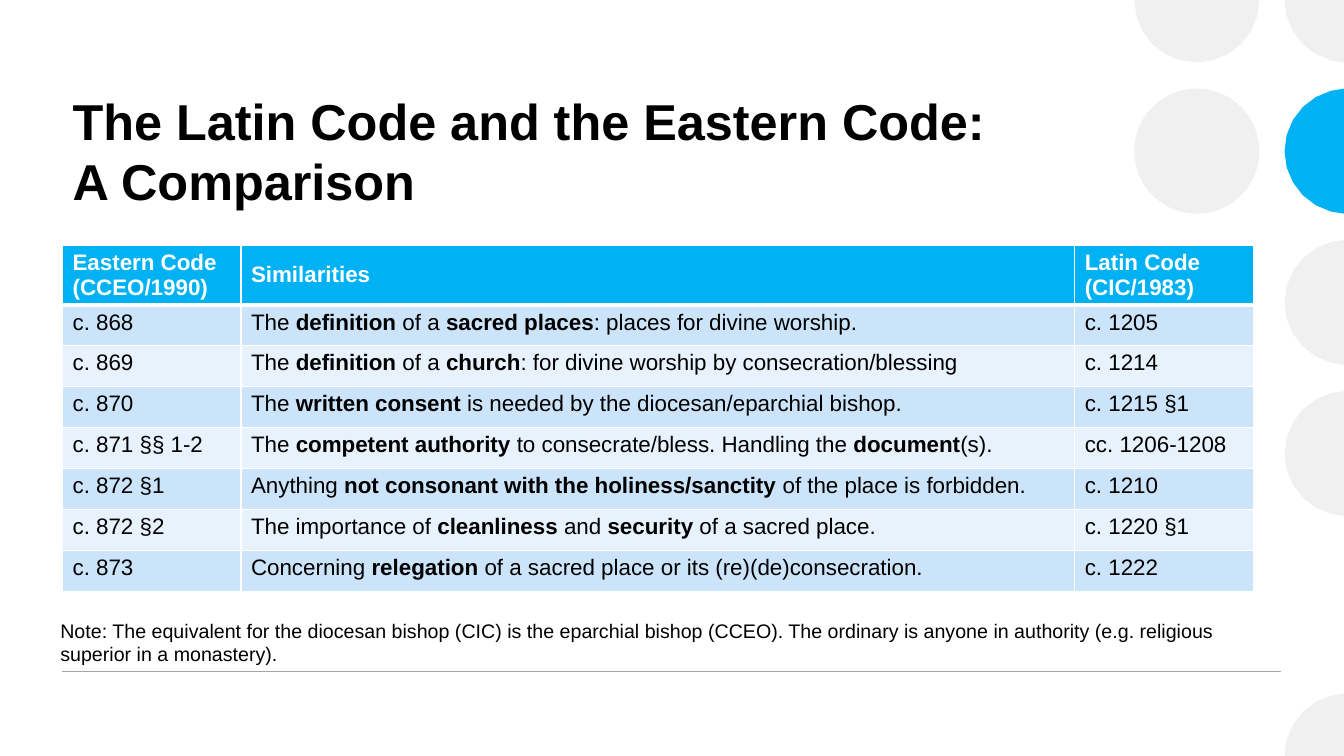
import math

from lxml import etree
from pptx import Presentation, util as u
from pptx.dml.color import RGBColor
from pptx.enum import shapes, text
from pptx.oxml import ns

WIDE, HIGH = 13.33, 7.5
BLUE, GRAY = "00B2F3", "EFF0EF"
HEADS = ["Eastern Code\n(CCEO/1990)", "Similarities", "Latin Code\n(CIC/1983)"]
CANONS = [
    ("c. 868", "The **definition** of a **sacred places**: places for divine worship.", "c. 1205"),
    ("c. 869", "The **definition** of a **church**: for divine worship by consecration/blessing", "c. 1214"),
    ("c. 870", "The **written consent** is needed by the diocesan/eparchial bishop.", "c. 1215 §1"),
    ("c. 871 §§ 1-2", "The **competent authority **to consecrate/bless. Handling the **document**(s).", "cc. 1206-1208"),
    ("c. 872 §1", "Anything **not consonant with the holiness/sanctity **of the place is forbidden.", "c. 1210"),
    ("c. 872 §2", "The importance of **cleanliness** and **security** of a sacred place.", "c. 1220 §1"),
    ("c. 873", "Concerning **relegation** of a sacred place or its (re)(de)consecration.", "c. 1222"),
]
NOTE = ("Note: The equivalent for the diocesan bishop (CIC) is the eparchial bishop (CCEO). "
        "The ordinary is anyone in authority (e.g. religious superior in a monastery).")


def paint(target, color):
    target.solid()
    target.fore_color.rgb = RGBColor.from_string(color)


def write(frame, words, size=16, color="000000", bold=False, anchor=text.MSO_ANCHOR.TOP):
    frame.word_wrap = True
    frame.vertical_anchor = anchor
    for i, line in enumerate(words.split("\n")):
        para = frame.paragraphs[0] if i == 0 else frame.add_paragraph()
        para.alignment = text.PP_ALIGN.LEFT
        for j, part in enumerate(line.split("**")):
            for k, piece in enumerate(part.split("\v")):
                if k:
                    para.add_line_break()
                run = para.add_run()
                run.text = piece
                run.font.name = "Arial"
                run.font.size = u.Pt(size)
                run.font.bold = bold or j % 2 == 1
                paint(run.font.fill, color)


def finish(disc, color):
    disc.shadow.inherit = False
    paint(disc.fill, color)
    disc.line.fill.background()


def draw_arc(slide, x, y, rad, start, stop, color):
    spots = []
    for deg in range(start, stop + 1, 15):
        turn = math.radians(deg)
        spots.append((x + rad * math.cos(turn), y + rad * math.sin(turn)))
    if stop - start == 90:
        spots.append((x, y))
    spots = [(u.Inches(min(WIDE, px)), u.Inches(py)) for px, py in spots]
    form = slide.shapes.build_freeform(*spots[0])
    form.add_line_segments(spots[1:], close=True)
    finish(form.convert_to_shape(), color)


def draw_dots(slide, x, y, size):
    rad = size / 2
    left, right = x + rad, x + rad + 1.49
    disc = slide.shapes.add_shape(shapes.MSO_SHAPE.OVAL, *map(u.Inches, (x, y + 0.88, size, size)))
    finish(disc, GRAY)
    draw_arc(slide, left, y, rad, 0, 180, GRAY)
    for row, start, stop in [(5, 180, 270), (3, 90, 270), (2, 90, 270), (1, 90, 270), (0, 90, 180)]:
        draw_arc(slide, right, y + row * 1.5, rad, start, stop, BLUE if row == 1 else GRAY)


def draw_rule(slide, x, y, wide):
    rule = slide.shapes.add_connector(shapes.MSO_CONNECTOR.STRAIGHT,
                                      *map(u.Inches, (x, y, x + wide, y)))
    paint(rule.line.fill, "A6A6A6")
    rule.line.width = u.Pt(1)
    etree.SubElement(rule.element.spPr, ns.qn("a:effectLst"))


def draw_title(slide, x, y, wide, high):
    title = slide.shapes.title
    title.left, title.top, title.width, title.height = map(u.Inches, (x, y, wide, high))
    write(title.text_frame, "The Latin Code and the Eastern Code:\vA Comparison",
          size=36, bold=True)


def edge(cell, base):
    props = cell._tc.get_or_add_tcPr()
    for side, width in [("L", 1), ("R", 1), ("T", 1), ("B", base)]:
        line = etree.SubElement(props, ns.qn("a:ln" + side), w=str(u.Pt(width)))
        fill = etree.SubElement(line, ns.qn("a:solidFill"))
        etree.SubElement(fill, ns.qn("a:srgbClr"), val="FFFFFF")


def draw_table(slide, x, y, wide, high):
    rows = [HEADS, *CANONS]
    grid = slide.shapes.add_table(len(rows), 3, *map(u.Inches, (x, y, wide, high))).table
    side = 1.77
    for col, size in zip(grid.columns, (side, wide - 2 * side, side)):
        col.width = u.Inches(size)
    for r, row in enumerate(rows):
        for c, words in enumerate(row):
            cell = grid.cell(r, c)
            edge(cell, 1 if r else 3)
            if r:
                paint(cell.fill, "CCE4FA" if r % 2 else "E7F2FD")
                write(cell.text_frame, words)
            else:
                paint(cell.fill, BLUE)
                write(cell.text_frame, words, color="FFFFFF", bold=True)
                cell.vertical_anchor = text.MSO_ANCHOR.MIDDLE


def draw_note(slide, x, y, wide, high):
    box = slide.shapes.add_textbox(*map(u.Inches, (x, y, wide, high)))
    write(box.text_frame, NOTE, size=14)
    box.text_frame.auto_size = text.MSO_AUTO_SIZE.SHAPE_TO_FIT_TEXT


def main():
    deck = Presentation()
    deck.slide_width, deck.slide_height = u.Inches(WIDE), u.Inches(HIGH)
    slide = deck.slides.add_slide(deck.slide_layouts[5])
    draw_dots(slide, 11.25, 0, 1.24)
    draw_rule(slide, 0.62, 6.66, 12.09)
    draw_title(slide, 0.62, 0.84, 9.5, 1.39)
    draw_table(slide, 0.62, 2.43, 11.81, 3.25)
    draw_note(slide, 0.5, 6.09, 11.72, 0.57)
    deck.save("out.pptx")


if __name__ == "__main__":
    main()
